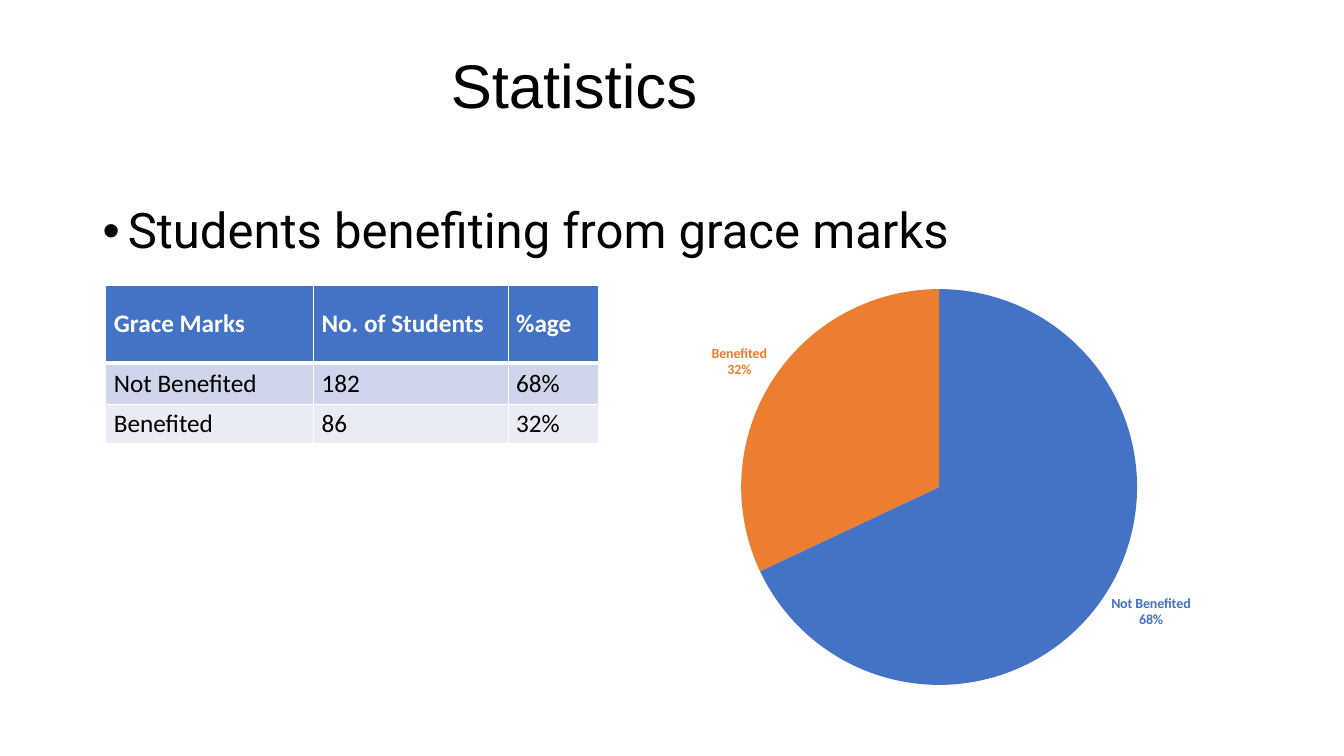
from lxml.etree import SubElement
from pptx import Presentation
from pptx.chart.data import CategoryChartData
from pptx.dml.color import RGBColor
from pptx.enum.chart import XL_CHART_TYPE, XL_LABEL_POSITION
from pptx.enum.text import MSO_ANCHOR
from pptx.oxml import parse_xml
from pptx.oxml.ns import nsdecls, qn
from pptx.util import Inches, Pt

COLORS = {
    "black": "000000",
    "white": "FFFFFF",
    "blue": "4472C4",
    "orange": "ED7D31",
    "band_dark": "CFD5EA",
    "band_light": "E9EBF5",
}
TABLE_ROWS = [
    ("Grace Marks", "No. of Students", "%age"),
    ("Not Benefited", "182", "68%"),
    ("Benefited", "86", "32%"),
]
COLUMN_WIDTHS = (2.06, 1.93, 0.9)
ROW_HEIGHTS = (0.77, 0.41, 0.39)
ROW_FILLS = ("blue", "band_dark", "band_light")
SHARES = {"Not Benefited": (68, "blue"), "Benefited": (32, "orange")}


def color(name):
    return RGBColor.from_string(COLORS[name])


def format_font(font, size, name="Calibri", fill="black", bold=False):
    font.size = Pt(size)
    font.name = name
    font.bold = bold
    font.color.rgb = color(fill)


def write_text(frame, text, line_spacing=None, bullet=False, **style):
    para = frame.paragraphs[0]
    if line_spacing:
        para.line_spacing = line_spacing
    if bullet:
        properties = para._p.get_or_add_pPr()
        properties.set("marL", str(Inches(0.25)))
        properties.set("indent", str(-Inches(0.25)))
        SubElement(properties, qn("a:buFont"), typeface="Arial")
        SubElement(properties, qn("a:buChar"), char="•")
    span = para.add_run()
    span.text = text
    format_font(span.font, **style)


def place(shape, left, top, width, height):
    shape.left, shape.top = Inches(left), Inches(top)
    shape.width, shape.height = Inches(width), Inches(height)


def add_title(page, text):
    title = page.shapes.title
    place(title, 0.92, 0.31, 9.55, 1.13)
    title.text_frame.vertical_anchor = MSO_ANCHOR.MIDDLE
    write_text(title.text_frame, text, line_spacing=0.9, size=44, name="Arial")


def add_bullet(page, text):
    box = page.shapes.add_textbox(Inches(0.92), Inches(2), Inches(11.5), Inches(0.75))
    box.text_frame.word_wrap = True
    write_text(box.text_frame, text, line_spacing=0.9, bullet=True,
               size=35, name="Roboto")


def add_borders(cell, top, bottom):
    properties = cell._tc.get_or_add_tcPr()
    for side, width in (("L", 1), ("R", 1), ("T", top), ("B", bottom)):
        properties.append(parse_xml(
            f'<a:ln{side} {nsdecls("a")} w="{Pt(width)}"><a:solidFill>'
            f'<a:srgbClr val="{COLORS["white"]}"/></a:solidFill></a:ln{side}>'))


def add_marks_table(page):
    frame = page.shapes.add_table(
        len(TABLE_ROWS), len(COLUMN_WIDTHS), Inches(1.05), Inches(2.83),
        Inches(sum(COLUMN_WIDTHS)), Inches(sum(ROW_HEIGHTS)))
    table = frame.table
    table.horz_banding = False
    for column, width in zip(table.columns, COLUMN_WIDTHS):
        column.width = Inches(width)
    for index, (row, height) in enumerate(zip(table.rows, ROW_HEIGHTS)):
        row.height = Inches(height)
        header = index == 0
        for cell, text in zip(row.cells, TABLE_ROWS[index]):
            cell.margin_left = Inches(0.08)
            cell.margin_right = cell.margin_top = cell.margin_bottom = 0
            cell.vertical_anchor = MSO_ANCHOR.MIDDLE
            # The rule under the header is thicker than the others
            add_borders(cell, top=3 if index == 1 else 1, bottom=3 if header else 1)
            cell.fill.solid()
            cell.fill.fore_color.rgb = color(ROW_FILLS[index])
            write_text(cell.text_frame, text, size=18, bold=header,
                       fill="white" if header else "black")


def show_name_and_percent(label):
    element = label._get_or_add_dLbl()
    for tag, value in (("showVal", "0"), ("showCatName", "1"), ("showPercent", "1")):
        element.find(qn(f"c:{tag}")).set("val", value)
    SubElement(element, qn("c:separator")).text = "\n"


def set_plot_area(chart, **fractions):
    plot_area = chart._chartSpace.chart.plotArea
    for layout in plot_area.findall(qn("c:layout")):
        plot_area.remove(layout)
    sizes = "".join(f'<c:{key} val="{value}"/>' for key, value in fractions.items())
    plot_area.insert(0, parse_xml(
        f'<c:layout {nsdecls("c")}><c:manualLayout><c:layoutTarget val="inner"/>'
        f'<c:xMode val="edge"/><c:yMode val="edge"/>{sizes}'
        f'</c:manualLayout></c:layout>'))


def add_share_pie(page):
    data = CategoryChartData(number_format="0")
    data.categories = list(SHARES)
    data.add_series("Series 1", [share for share, _ in SHARES.values()])
    chart = page.shapes.add_chart(
        XL_CHART_TYPE.PIE, Inches(6.51), Inches(2.73), Inches(5.61), Inches(4.29),
        data).chart
    chart.has_title = False
    chart.has_legend = False
    format_font(chart.font, size=10)
    set_plot_area(chart, x=0.15, y=0.03, w=0.7, h=0.92)
    plot = chart.plots[0]
    plot.vary_by_categories = True
    for index, (_, fill) in enumerate(SHARES.values()):
        point = plot.series[0].points[index]
        point.format.fill.solid()
        point.format.fill.fore_color.rgb = color(fill)
        point.format.line.fill.background()
        label = point.data_label
        format_font(label.font, size=10, fill=fill, bold=True)
        label.position = XL_LABEL_POSITION.OUTSIDE_END
        show_name_and_percent(label)


def main():
    deck = Presentation()
    deck.slide_width, deck.slide_height = Inches(13.33), Inches(7.5)
    page = deck.slides.add_slide(deck.slide_layouts.get_by_name("Title Only"))

    # Heading and statement
    add_title(page, "Statistics")
    add_bullet(page, "Students benefiting from grace marks")

    # Figures and their shares
    add_marks_table(page)
    add_share_pie(page)
    deck.save("out.pptx")


if __name__ == "__main__":
    main()
